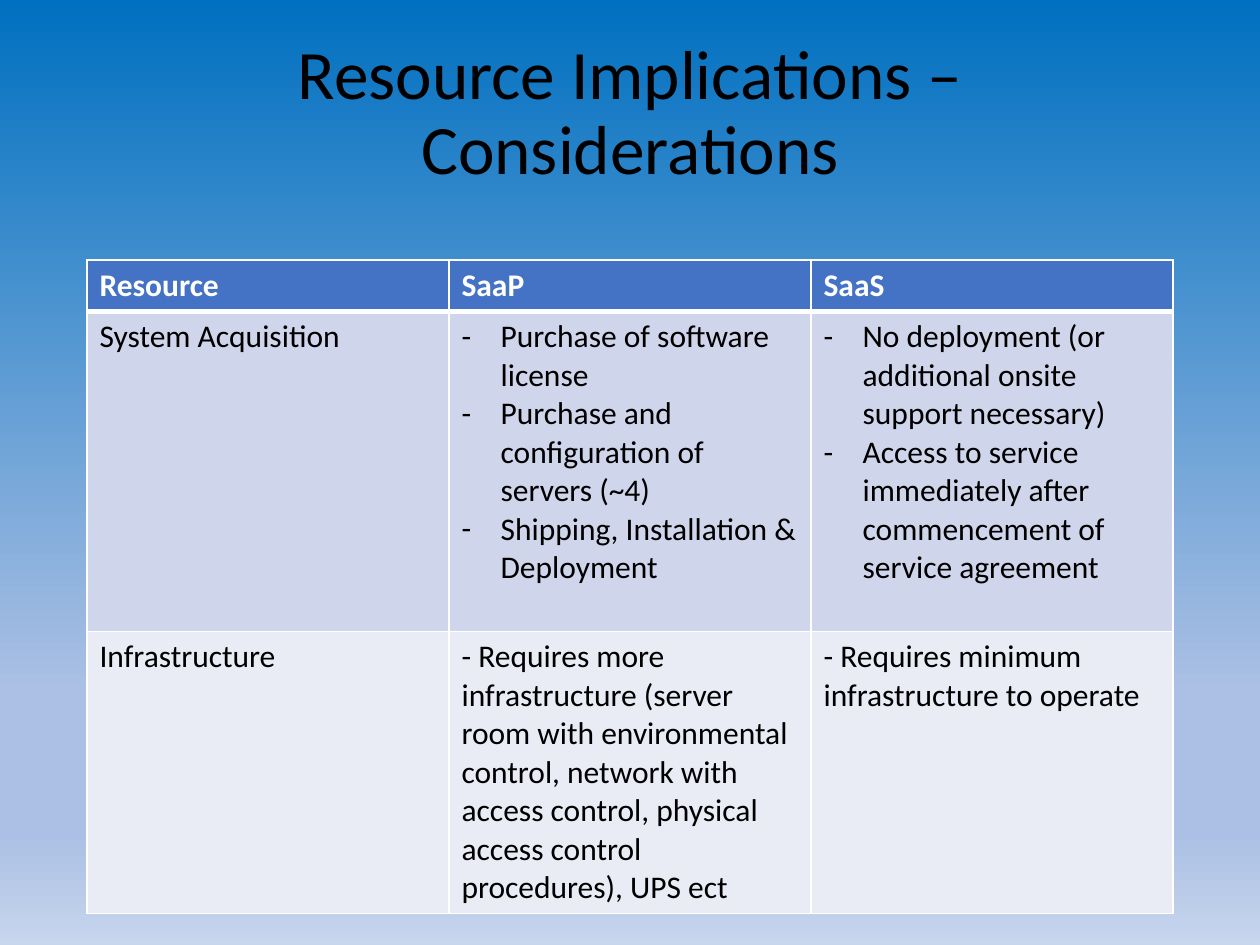
from lxml.etree import SubElement
from pptx import Presentation
from pptx.dml.color import RGBColor
from pptx.enum.text import MSO_ANCHOR, MSO_AUTO_SIZE, PP_ALIGN
from pptx.oxml import parse_xml
from pptx.oxml.ns import nsdecls, qn
from pptx.util import Inches, Pt

FONT = "Calibri"
W, H = Inches(10), Inches(7.5)
MARGIN = 0.069
INDENT = Inches(0.31)
STOPS = [(0, "0070C0"), (73, "ABC0E4"), (88, "ABC0E4"), (100, "C7D5ED")]
ROW_SHARES = [0.41 / 7.5, 2.54 / 7.5, 2.23 / 7.5]
ROW_FILLS = ["4472C4", "CFD5EA", "E9EBF5"]
ROWS = [
    ["Resource", "SaaP", "SaaS"],
    [
        "System Acquisition",
        [
            "Purchase of software license",
            "Purchase and configuration of servers (~4)",
            "Shipping, Installation & Deployment",
        ],
        [
            "No deployment (or additional onsite support necessary)",
            "Access to service immediately after commencement of service agreement",
        ],
    ],
    [
        "Infrastructure",
        "- Requires more infrastructure (server room with environmental control, "
        "network with access control, physical access control procedures), UPS ect",
        "- Requires minimum infrastructure to operate",
    ],
]


def color(value):
    return RGBColor.from_string(value)


def share(left, top, width, height):
    return round(W * left), round(H * top), round(W * width), round(H * height)


def write(p, text, size=18, fill="000000", bold=False, align=None, spacing=None, bullet=None):
    r = p.add_run()
    r.text = text
    r.font.name, r.font.size, r.font.bold = FONT, Pt(size), bold
    r.font.color.rgb = color(fill)
    p.alignment, p.line_spacing = align, spacing
    if bullet:
        pPr = p._p.get_or_add_pPr()
        pPr.set("marL", str(INDENT))
        pPr.set("indent", str(-INDENT))
        SubElement(pPr, qn("a:buFont")).set("typeface", FONT)
        SubElement(pPr, qn("a:buChar")).set("char", bullet)


def add_background(s):
    stops = "".join(
        f'<a:gs pos="{pos * 1000}"><a:srgbClr val="{value}"/></a:gs>' for pos, value in STOPS
    )
    s.background.fill.solid()
    bgPr = s._element.cSld.bg.bgPr
    bgPr.replace(
        bgPr.find(qn("a:solidFill")),
        parse_xml(
            f'<a:gradFill {nsdecls("a")} rotWithShape="1"><a:gsLst>{stops}</a:gsLst>'
            '<a:lin ang="5400000" scaled="0"/></a:gradFill>'
        ),
    )


def add_title(s, text, box):
    sp = s.shapes.title
    sp.left, sp.top, sp.width, sp.height = box
    tf = sp.text_frame
    tf.word_wrap, tf.auto_size = True, MSO_AUTO_SIZE.NONE
    tf.vertical_anchor = MSO_ANCHOR.MIDDLE
    write(tf.paragraphs[0], text, size=39.6, align=PP_ALIGN.CENTER, spacing=0.9)


def add_borders(cell, **widths):
    tcPr = cell._tc.get_or_add_tcPr()
    for side, width in widths.items():
        ln = SubElement(tcPr, qn(f"a:ln{side}"), w=str(Pt(width)))
        SubElement(SubElement(ln, qn("a:solidFill")), qn("a:srgbClr")).set("val", "FFFFFF")


def fill_cell(cell, content, fill, header, below_header):
    add_borders(cell, L=1, R=1, T=3 if below_header else 1, B=3 if header else 1)
    cell.fill.solid()
    cell.fill.fore_color.rgb = color(fill)
    bullet = "-" if isinstance(content, list) else None
    tf = cell.text_frame
    for i, text in enumerate(content if bullet else [content]):
        p = tf.add_paragraph() if i else tf.paragraphs[0]
        write(p, text, fill="FFFFFF" if header else "000000", bold=header, bullet=bullet)


def add_comparison(s, rows, box):
    table = s.shapes.add_table(len(rows), len(rows[0]), *box).table
    for i, (row, portion, fill) in enumerate(zip(rows, ROW_SHARES, ROW_FILLS)):
        table.rows[i].height = round(H * portion)
        for j, content in enumerate(row):
            fill_cell(table.cell(i, j), content, fill, header=i == 0, below_header=i == 1)


def main():
    prs = Presentation()
    prs.slide_width, prs.slide_height = W, H
    s = prs.slides.add_slide(prs.slide_layouts[5])
    width = 1 - 2 * MARGIN
    add_background(s)
    add_title(s, "Resource Implications – Considerations", share(MARGIN, 0.053, width, 0.137))
    add_comparison(s, ROWS, share(MARGIN, 0.275, width, sum(ROW_SHARES)))
    prs.save("out.pptx")


if __name__ == "__main__":
    main()
